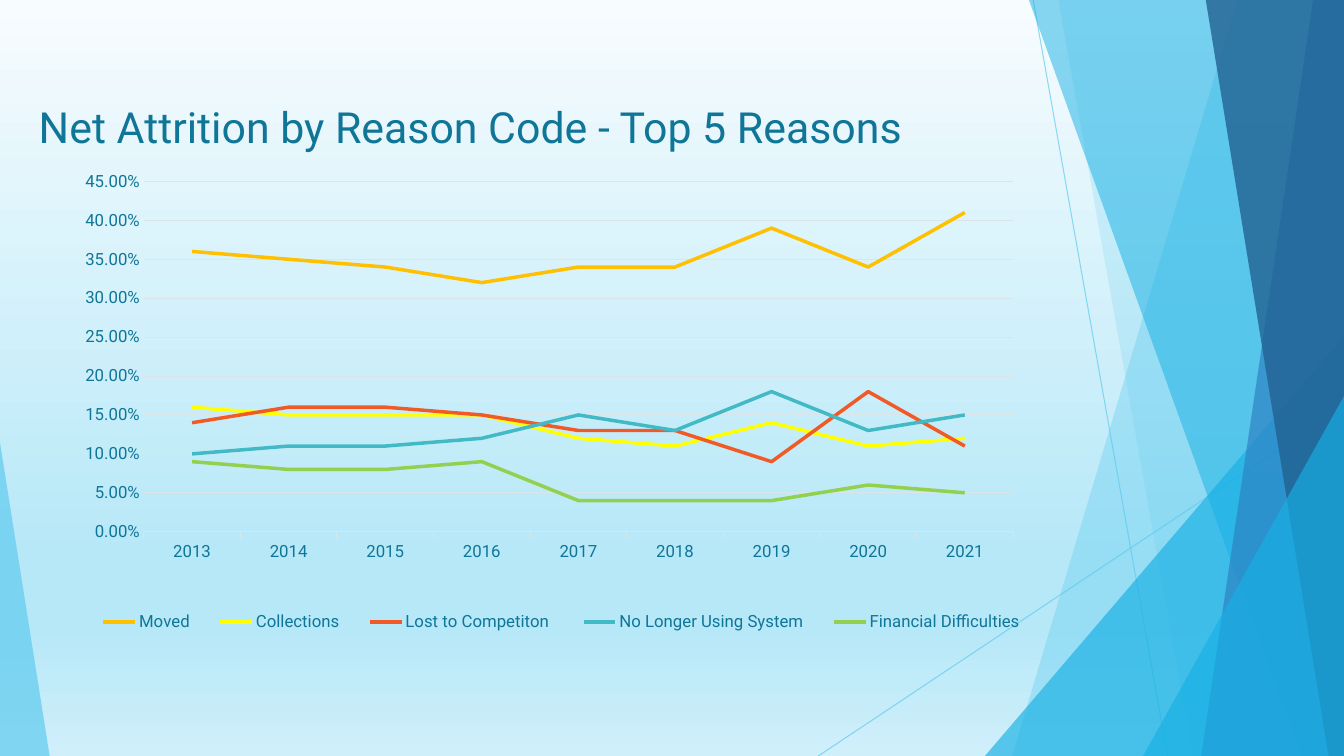
from lxml.etree import SubElement as Sub
from pptx import Presentation
from pptx.chart.data import CategoryChartData as Data
from pptx.dml.color import RGBColor as RGB
from pptx.enum.chart import XL_CHART_TYPE as Kind, XL_LEGEND_POSITION as Spot, XL_TICK_MARK as Tick
from pptx.enum.shapes import MSO_CONNECTOR as Conn, MSO_SHAPE as Shape
from pptx.enum.text import MSO_ANCHOR as Anchor
from pptx.oxml.ns import qn
from pptx.util import Pt

# Content
TITLE = "Net Attrition by Reason Code - Top 5 Reasons"
YEARS = [str(y) for y in range(2013, 2022)]
RATES = [  # name, colour, share per year
    ("Moved", "FFC000", [0.36, 0.35, 0.34, 0.32, 0.34, 0.34, 0.39, 0.34, 0.41]),
    ("Collections", "FFFF00", [0.16, 0.15, 0.15, 0.15, 0.12, 0.11, 0.14, 0.11, 0.12]),
    ("Lost to Competiton ", "F15A27", [0.14, 0.16, 0.16, 0.15, 0.13, 0.13, 0.09, 0.18, 0.11]),
    ("No Longer Using System", "41BAC5", [0.1, 0.11, 0.11, 0.12, 0.15, 0.13, 0.18, 0.13, 0.15]),
    ("Financial Difficulties", "92D050", [0.09, 0.08, 0.08, 0.09, 0.04, 0.04, 0.04, 0.06, 0.05]),
]

# Theme
W, H = 960, 540
THEME = dict(
    font="Roboto", ink="0F7698", grid="DBE4E7", title=30.6, label=12,
    sky="5FCBEF", cyan="17B0E4", blue="2E83C3", navy="226292",
    back=[(0, "F7FCFE"), (74, "B7E8F8"), (83, "B7E8F8"), (100, "CFEFFA")],
)

# Chart frame on the slide; plot and legend within it
FRAME = (38.2, 122.4, 717, 342)
PLOT = (64.5, 7.2, 621, 250.3)
KEY = (18, 309, 690, 26)

# Decoration, back to front
RAYS = [(738, 0, 834, H), (W, 290, 584.5, H)]
FACETS = [  # band: top x, bottom x; tri: left, top, width, apex side
    ("band", (884, 723), "sky", 36),
    ("band", (756, 852), "sky", 20),
    ("tri", (703.5, 240, 256.5, 1), "cyan", 66),
    ("band", (735, 929.5), "cyan", 50),
    ("band", (938, 858), "blue", 70),
    ("band", (861.3, 949), "navy", 80),
    ("tri", (816.5, 283, 143.5, 1), "cyan", 66),
    ("tri", (0, 316, 35.5, 0), "sky", 70),
]


def rgb(name):
    return RGB.from_string(THEME.get(name, name))


def fade(part, alpha):
    for clr in part._element.spPr.iter(qn("a:srgbClr")):
        Sub(clr, qn("a:alpha"), val=str(alpha * 1000))


def style(font, size):
    font.name, font.size = THEME["font"], Pt(size)
    font.color.rgb = rgb("ink")


def ray(shapes, ends):
    line = shapes.add_connector(Conn.STRAIGHT, *map(Pt, ends))
    line.line.color.rgb, line.line.width = rgb("sky"), Pt(0.75)
    fade(line, 70)
    Sub(line._element.spPr, qn("a:effectLst"))


def facet(shapes, kind, geo, color, alpha):
    if kind == "band":
        top, low = geo
        pen = shapes.build_freeform(Pt(top), 0)
        pen.add_line_segments([(Pt(W), 0), (Pt(W), Pt(H)), (Pt(low), Pt(H))])
        part = pen.convert_to_shape()
    else:
        x, y, wide, side = geo
        part = shapes.add_shape(Shape.ISOSCELES_TRIANGLE, Pt(x), Pt(y), Pt(wide), Pt(H - y))
        part.adjustments[0] = side
    part.shadow.inherit = False
    part.fill.solid()
    part.fill.fore_color.rgb = rgb(color)
    part.line.fill.background()
    fade(part, alpha)


def backdrop(slide):
    fill = slide.background.fill
    fill.gradient()
    fill.gradient_angle = 270
    stops = next(slide._element.iter(qn("a:gsLst")))
    for old in list(stops):
        stops.remove(old)
    for pos, color in THEME["back"]:
        stop = Sub(stops, qn("a:gs"), pos=str(pos * 1000))
        Sub(stop, qn("a:srgbClr"), val=color)


def heading(shapes):
    box = shapes.add_textbox(Pt(20.6), Pt(47), Pt(775), Pt(102))
    frame = box.text_frame
    frame.word_wrap, frame.vertical_anchor = True, Anchor.BOTTOM
    frame.margin_bottom = Pt(39.6)
    frame.text = TITLE
    para = frame.paragraphs[0]
    para.line_spacing = 0.9
    style(para.runs[0].font, THEME["title"])


def place(node, box, index, rules=()):
    for old in node.findall(qn("c:layout")):
        node.remove(old)
    layout = Sub(node, qn("c:layout"))
    node.insert(index, layout)
    manual = Sub(layout, qn("c:manualLayout"))
    parts = [v / full for v, full in zip(box, FRAME[2:] * 2)]
    modes = [("xMode", "edge"), ("yMode", "edge")]
    for tag, val in [*rules, *modes, *zip("xywh", parts)]:
        Sub(manual, qn("c:" + tag), val=str(val))


def graph(shapes):
    data = Data(number_format="0.00%")
    data.categories = YEARS
    for name, _, rates in RATES:
        data.add_series(name, rates)
    chart = shapes.add_chart(Kind.LINE, *map(Pt, FRAME), data).chart
    style(chart.font, THEME["label"])
    chart.has_title = False
    chart.plots[0].vary_by_categories = False
    area = next(chart._chartSpace.iter(qn("c:plotArea")))
    place(area, PLOT, 0, [("layoutTarget", "inner")])
    for line, (_, color, _) in zip(chart.series, RATES):
        line.smooth = False
        line.format.line.color.rgb, line.format.line.width = rgb(color), Pt(2.5)

    # Axes
    years, scale = chart.category_axis, chart.value_axis
    years.major_tick_mark, scale.major_tick_mark = Tick.OUTSIDE, Tick.NONE
    scale.minimum_scale, scale.maximum_scale, scale.major_unit = 0, 0.45, 0.05
    scale.tick_labels.number_format = "0.00%"
    scale.tick_labels.number_format_is_linked = False
    scale.format.line.fill.background()
    for part in (years, scale.major_gridlines):
        part.format.line.color.rgb, part.format.line.width = rgb("grid"), Pt(0.75)
    for axis in (years, scale):
        style(axis.tick_labels.font, THEME["label"])

    # Legend
    chart.has_legend = True
    key = chart.legend
    key.position, key.include_in_layout = Spot.BOTTOM, False
    style(key.font, THEME["label"])
    place(key._element, KEY, 1)


def main():
    deck = Presentation()
    deck.slide_width, deck.slide_height = Pt(W), Pt(H)
    slide = deck.slides.add_slide(deck.slide_layouts[6])
    backdrop(slide)
    for ends in RAYS:
        ray(slide.shapes, ends)
    for item in FACETS:
        facet(slide.shapes, *item)
    heading(slide.shapes)
    graph(slide.shapes)
    deck.save("out.pptx")


if __name__ == "__main__":
    main()
